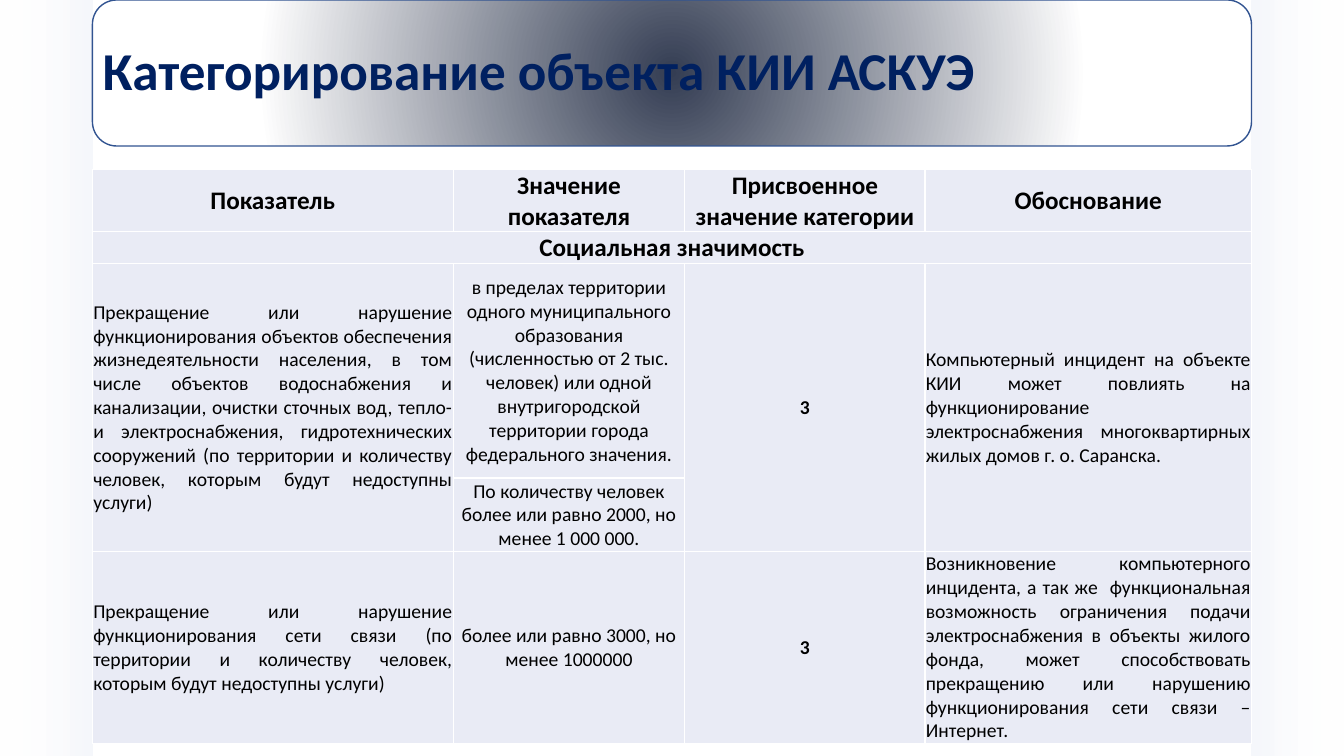
import pptx
import pptx.util
import pptx.dml.color
import pptx.enum.shapes
import pptx.enum.text
import pptx.oxml
import pptx.oxml.ns

Cm = pptx.util.Cm
Pt = pptx.util.Pt
ALIGN = pptx.enum.text.PP_ALIGN
MIDDLE = pptx.enum.text.MSO_ANCHOR.MIDDLE
SHAPE = pptx.enum.shapes.MSO_SHAPE
NAMESPACE = pptx.oxml.ns.nsdecls("a")

SLIDE_WIDTH, SLIDE_HEIGHT = 33.87, 19.05
MARGIN, CONTENT_WIDTH = 2.33, 29.21
COLUMN_WIDTHS = [9.09, 5.84, 6.05, 8.23]
ROW_HEIGHTS = [1.52, 0.78, 5.41, 1.85, 4.83]
MERGES = [((1, 0), (1, 3))] + [((2, column), (3, column)) for column in (0, 2, 3)]

HEADING = {"size": Pt(18), "bold": True, "align": ALIGN.CENTER}
CATEGORY = {"size": Pt(14), "bold": True, "align": ALIGN.CENTER}
VALUE = {"size": Pt(14), "bold": False, "align": ALIGN.CENTER}
PROSE = {"size": Pt(14), "bold": False, "align": ALIGN.JUSTIFY}
BODY_FORMATS = [PROSE, VALUE, CATEGORY, PROSE]

HEADINGS = ["Показатель", "Значение показателя", "Присвоенное значение категории", "Обоснование"]
SECTION = "Социальная значимость"
BODY_ROWS = [
    [
        "Прекращение или нарушение функционирования объектов обеспечения жизнедеятельности "
        "населения, в том числе объектов водоснабжения и канализации, очистки сточных вод, "
        "тепло- и электроснабжения, гидротехнических сооружений (по территории и количеству "
        "человек, которым будут недоступны услуги)",
        "в пределах территории одного муниципального образования (численностью от 2 тыс. "
        "человек) или одной внутригородской территории города федерального значения.",
        "3",
        "Компьютерный инцидент на объекте КИИ может повлиять на функционирование "
        "электроснабжения многоквартирных жилых домов г. о. Саранска.",
    ],
    [None, "По количеству человек более или равно 2000, но менее 1 000 000.", None, None],
    [
        "Прекращение или нарушение функционирования сети связи (по территории и количеству "
        "человек, которым будут недоступны услуги)",
        "более или равно 3000, но менее 1000000",
        "3",
        "Возникновение компьютерного инцидента, а так же  функциональная возможность "
        "ограничения подачи электроснабжения в объекты жилого фонда, может способствовать "
        "прекращению или нарушению функционирования сети связи – Интернет.",
    ],
]


def rgb(value):
    return pptx.dml.color.RGBColor.from_string(value)


def set_attributes(target, values):
    for name, value in values.items():
        setattr(target, name, value)


def place(shape, left, top, width, height):
    set_attributes(shape, {"left": Cm(left), "top": Cm(top), "width": Cm(width), "height": Cm(height)})


def format_paragraph(para, text, color, values):
    para.alignment = values["align"]
    span = para.add_run()
    span.text = text
    set_attributes(span.font, {"name": "Calibri", "size": values["size"], "bold": values["bold"]})
    span.font.color.rgb = rgb(color)


def gradient_fill(shape, stops, direction):
    stop_xml = "".join(
        f'<a:gs pos="{position * 1000}"><a:srgbClr val="{color}">'
        f'<a:alpha val="{opacity * 1000}"/></a:srgbClr></a:gs>'
        for position, color, opacity in stops
    )
    gradient = pptx.oxml.parse_xml(
        f'<a:gradFill {NAMESPACE} rotWithShape="1"><a:gsLst>{stop_xml}</a:gsLst>{direction}</a:gradFill>'
    )
    shape.fill.background()
    properties = shape.element.spPr
    properties.replace(properties.find(pptx.oxml.ns.qn("a:noFill")), gradient)


def add_panel(page, kind, bounds, stops, direction):
    panel = page.shapes.add_shape(kind, *map(Cm, bounds))
    panel.shadow.inherit = False
    gradient_fill(panel, stops, direction)
    panel.line.fill.background()
    return panel


def add_side_strips(page):
    stops = [(0, "F6F8FC", 100), (100, "FFFFFF", 0)]
    for left, rotation in ((0, 0), (SLIDE_WIDTH - MARGIN, 180)):
        strip = add_panel(page, SHAPE.RECTANGLE, (left, 0, MARGIN, SLIDE_HEIGHT), stops,
                          '<a:lin ang="10800000" scaled="0"/>')
        strip.rotation = rotation


def add_title(page, text):
    center = '<a:fillToRect l="50000" t="50000" r="50000" b="50000"/>'
    banner = add_panel(page, SHAPE.ROUNDED_RECTANGLE, (MARGIN, 0, CONTENT_WIDTH, 3.68),
                       [(0, "343D53", 100), (71, "FFFFFF", 100)],
                       f'<a:path path="circle">{center}</a:path>')
    banner.line.color.rgb = rgb("325491")
    banner.line.width = Pt(1)
    title = page.shapes.title
    place(title, MARGIN, 0.53, CONTENT_WIDTH, 2.64)
    banner.element.addnext(title.element)
    set_attributes(title.text_frame, {
        "vertical_anchor": MIDDLE, "word_wrap": True, "auto_size": pptx.enum.text.MSO_AUTO_SIZE.NONE})
    para = title.text_frame.paragraphs[0]
    para.line_spacing = 0.9
    format_paragraph(para, text, "002060", {"size": Pt(38), "bold": True, "align": ALIGN.LEFT})


def style_cell(cell):
    properties = cell._tc.get_or_add_tcPr()
    for side in ("lnL", "lnR", "lnT", "lnB"):
        properties.append(pptx.oxml.parse_xml(
            f'<a:{side} {NAMESPACE} w="12700"><a:solidFill><a:srgbClr val="FFFFFF"/></a:solidFill></a:{side}>'))
    cell.fill.solid()
    cell.fill.fore_color.rgb = rgb("E9EBF5")
    set_attributes(cell, {
        "vertical_anchor": MIDDLE, "margin_left": Cm(0.02), "margin_right": Cm(0.02),
        "margin_top": Cm(0.02), "margin_bottom": 0})


def add_criteria_table(page):
    frame = page.shapes.add_table(
        len(ROW_HEIGHTS), len(COLUMN_WIDTHS), Cm(MARGIN), Cm(4.27), Cm(CONTENT_WIDTH), Cm(sum(ROW_HEIGHTS)))
    table = frame.table
    set_attributes(table, {"first_row": False, "horz_banding": False})
    for column, width in zip(table.columns, COLUMN_WIDTHS):
        column.width = Cm(width)
    for row, height in zip(table.rows, ROW_HEIGHTS):
        row.height = Cm(height)
    for start, end in MERGES:
        table.cell(*start).merge(table.cell(*end))
    rows = [HEADINGS, [SECTION, None, None, None]] + BODY_ROWS
    for row_index, texts in enumerate(rows):
        formats = [HEADING] * len(texts) if row_index < 2 else BODY_FORMATS
        for column_index, (text, values) in enumerate(zip(texts, formats)):
            cell = table.cell(row_index, column_index)
            style_cell(cell)
            if text:
                format_paragraph(cell.text_frame.paragraphs[0], text, "000000", values)


def main():
    deck = pptx.Presentation()
    set_attributes(deck, {"slide_width": Cm(SLIDE_WIDTH), "slide_height": Cm(SLIDE_HEIGHT)})
    page = deck.slides.add_slide(deck.slide_layouts.get_by_name("Title Only"))
    add_side_strips(page)
    add_title(page, "Категорирование объекта КИИ АСКУЭ")
    add_criteria_table(page)
    deck.save("out.pptx")


if __name__ == "__main__":
    main()
